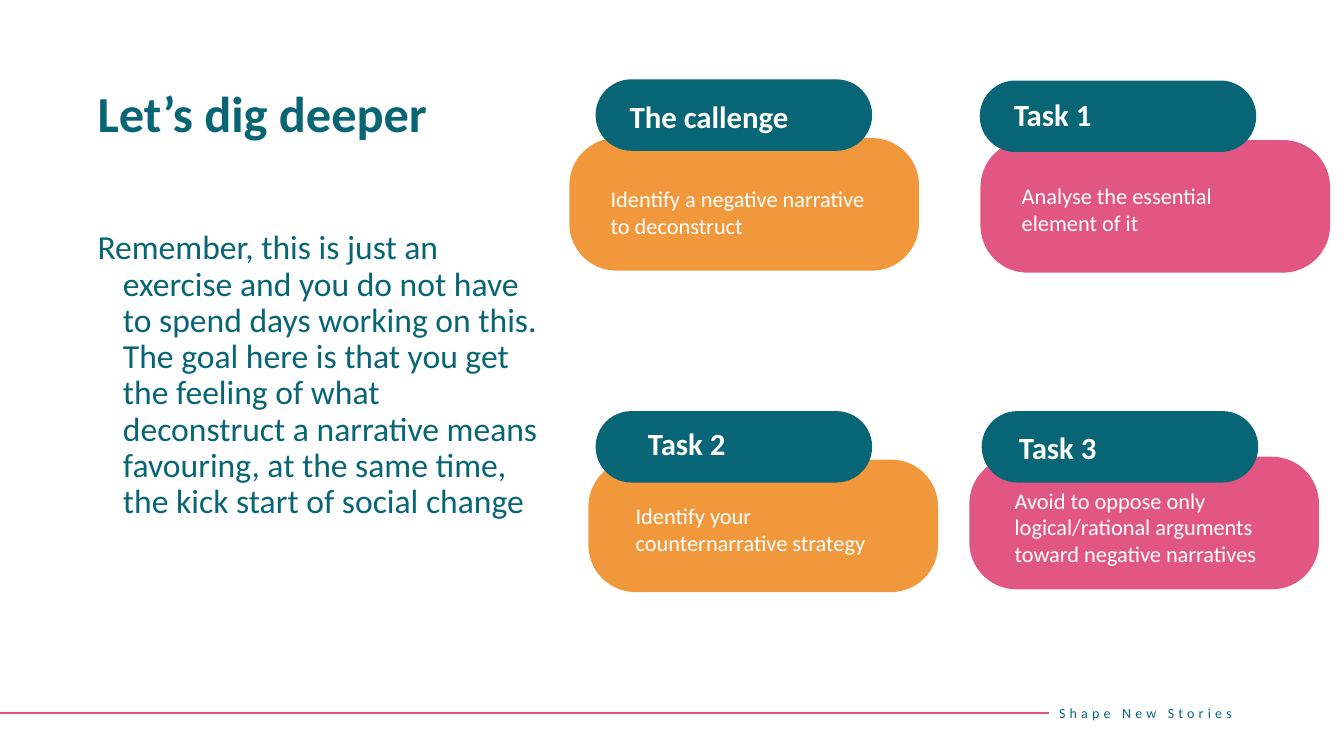
from lxml.etree import SubElement
from pptx import Presentation
from pptx.dml.color import RGBColor
from pptx.enum.shapes import MSO_CONNECTOR, MSO_SHAPE
from pptx.enum.text import MSO_ANCHOR, MSO_AUTO_SIZE
from pptx.oxml.ns import qn
from pptx.util import Cm, Pt

COLORS = {
    "teal": "086575",
    "orange": "F1983D",
    "pink": "E25684",
    "white": "FFFFFF",
}
FONT = "Calibri"
PANEL_SIZE = (8.81, 3.34)
PILL_SIZE = (6.97, 1.8)

CARDS = [
    {
        "heading": "The callenge", "task": ["Identify a negative narrative to deconstruct"],
        "color": "orange", "panel": (14.35, 3.48), "pill": (15.01, 2),
        "heading_box": (15.62, 2.34, 6.96, 1.19), "task_box": (15.14, 4.55, 7.24, 1.63),
    },
    {
        "heading": "Task 1", "task": ["Analyse the essential element of it"],
        "color": "pink", "panel": (24.71, 3.53), "pill": (24.69, 2.03),
        "heading_box": (25.3, 2.29, 5.64, 1.19), "task_box": (25.5, 4.47, 7.24, 1.63),
    },
    {
        "heading": "Task 2", "task": ["Identify your counternarrative strategy"],
        "color": "orange", "panel": (14.83, 11.58), "pill": (15.01, 10.36),
        "heading_box": (16.08, 10.57, 5.38, 1.19), "task_box": (15.77, 12.52, 6.96, 1.63),
    },
    {
        "heading": "Task 3",
        "task": ["Avoid to oppose only logical/rational arguments", "toward negative narratives"],
        "color": "pink", "panel": (24.43, 11.51), "pill": (24.74, 10.36),
        "heading_box": (25.43, 10.67, 5.92, 1.19), "task_box": (25.32, 12.14, 7.24, 2.31),
    },
]


def rgb(name):
    return RGBColor.from_string(COLORS[name])


def add_text(slide, box, lines, size, color, bold=False, grow=False):
    label = slide.shapes.add_textbox(*map(Cm, box))
    frame = label.text_frame
    frame.word_wrap = True
    if grow:
        frame.auto_size = MSO_AUTO_SIZE.SHAPE_TO_FIT_TEXT
    for index, line in enumerate(lines):
        paragraph = frame.add_paragraph() if index else frame.paragraphs[0]
        run = paragraph.add_run()
        run.text = line
        run.font.name = FONT
        run.font.size = Pt(size)
        run.font.bold = bold
        run.font.color.rgb = rgb(color)
    return label


def add_rounded(slide, position, size, color, rounding):
    panel = slide.shapes.add_shape(MSO_SHAPE.ROUNDED_RECTANGLE, *map(Cm, position + size))
    panel.adjustments[0] = rounding
    panel.shadow.inherit = False
    panel.fill.solid()
    panel.fill.fore_color.rgb = rgb(color)
    panel.line.fill.background()


def add_card(slide, card):
    add_rounded(slide, card["panel"], PANEL_SIZE, card["color"], 0.355)
    add_rounded(slide, card["pill"], PILL_SIZE, "teal", 0.5)
    add_text(slide, card["heading_box"], [card["heading"]], 22, "white", bold=True, grow=True)
    add_text(slide, card["task_box"], card["task"], 16, "white", grow=True)


def add_footer(slide):
    footer = add_text(slide, (26.44, 17.45, 6.93, 1.02), ["Shape New Stories"], 10, "teal")
    footer.text_frame.vertical_anchor = MSO_ANCHOR.MIDDLE
    run = footer.text_frame.paragraphs[0].runs[0]
    run.font._element.set("spc", "300")
    rule = slide.shapes.add_connector(
        MSO_CONNECTOR.STRAIGHT, 0, Cm(17.96), Cm(26.44), Cm(17.96)
    )
    rule.end_connect(footer, 1)
    rule.line.color.rgb = rgb("pink")
    rule.line.width = Pt(1.5)
    SubElement(rule._element.spPr, qn("a:effectLst"))


def add_introduction(slide):
    title = add_text(slide, (2.21, 2.11, 11.68, 2.24), ["Let’s dig deeper"], 36, "teal", bold=True)
    reminder = add_text(
        slide,
        (2.21, 5.69, 11.68, 10.69),
        [
            "Remember, this is just an exercise and you do not have to spend days "
            "working on this. The goal here is that you get the feeling of what "
            "deconstruct a narrative means favouring, at the same time, the kick "
            "start of social change"
        ],
        24,
        "teal",
    )
    for label in (title, reminder):
        label.text_frame.paragraphs[0].line_spacing = 0.9
    hanging = reminder.text_frame.paragraphs[0]._p.get_or_add_pPr()
    hanging.set("marL", str(Cm(0.64)))
    hanging.set("indent", str(-Cm(0.64)))


def main():
    deck = Presentation()
    deck.slide_width = Cm(33.87)
    deck.slide_height = Cm(19.05)
    slide = deck.slides.add_slide(deck.slide_layouts[6])
    add_footer(slide)
    for card in CARDS:
        add_card(slide, card)
    add_introduction(slide)
    deck.save("out.pptx")


if __name__ == "__main__":
    main()
